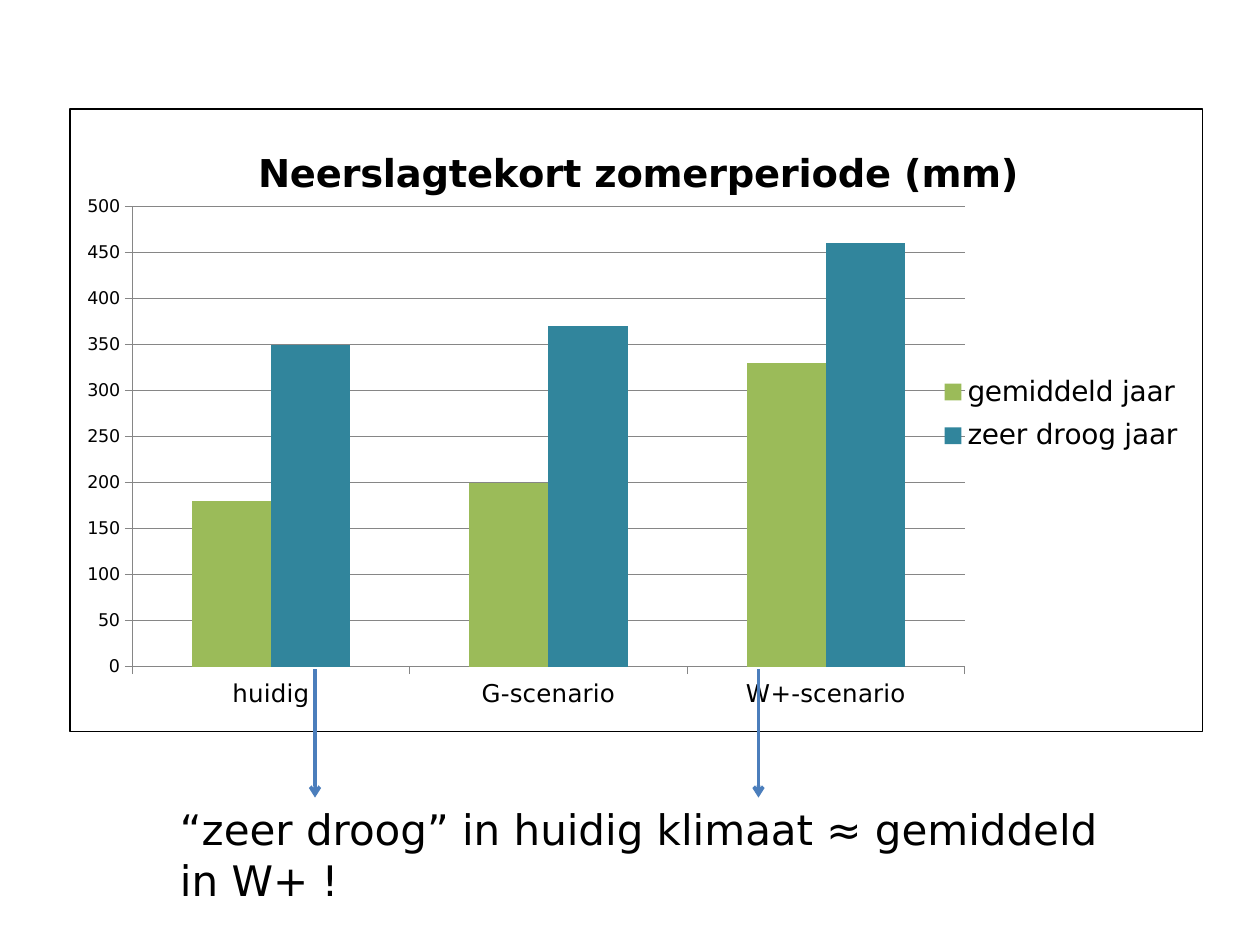
from pptx import Presentation
from pptx.chart.data import CategoryChartData
from pptx.dml.color import RGBColor
from pptx.enum.chart import XL_CHART_TYPE, XL_LEGEND_POSITION, XL_TICK_MARK
from pptx.enum.shapes import MSO_CONNECTOR
from pptx.enum.text import MSO_AUTO_SIZE
from pptx.oxml import parse_xml
from pptx.oxml.ns import nsdecls, qn
from pptx.util import Inches, Pt

COLUMNS = XL_CHART_TYPE.COLUMN_CLUSTERED
LEGEND_RIGHT = XL_LEGEND_POSITION.RIGHT
TICK_OUTSIDE = XL_TICK_MARK.OUTSIDE
STRAIGHT = MSO_CONNECTOR.STRAIGHT
GROW = MSO_AUTO_SIZE.SHAPE_TO_FIT_TEXT

COLORS = {
    "text": "000000",
    "axis": "868686",
    "arrow": "4B7EBC",
    "average": "9BBB59",
    "dry": "31859C",
}
FONT = "DejaVu Sans"


def rgb(name):
    return RGBColor.from_string(COLORS[name])


def set_layout(parent, index, x, y, w=None, h=None, inner=False):
    """Place a chart part by fractions of the chart area."""
    for old in parent.findall(qn("c:layout")):
        parent.remove(old)
    settings = [("layoutTarget", "inner")] if inner else []
    settings += [("xMode", "edge"), ("yMode", "edge"), ("x", x), ("y", y)]
    if w is not None:
        settings += [("w", w), ("h", h)]
    body = "".join(f'<c:{tag} val="{value}"/>' for tag, value in settings)
    parent.insert(index, parse_xml(
        f'<c:layout {nsdecls("c")}><c:manualLayout>{body}</c:manualLayout></c:layout>'))


class SlideBuilder:
    def __init__(self, slide):
        self.slide = slide

    def style_font(self, font, size, bold=False):
        font.color.rgb = rgb("text")
        values = {"name": FONT, "size": Pt(size), "bold": bold}
        for attribute, value in values.items():
            setattr(font, attribute, value)

    def style_line(self, line, color, width):
        line.color.rgb = rgb(color)
        line.width = Pt(width)

    def column_chart(self, box, title, categories, series):
        data = CategoryChartData(number_format="0")
        data.categories = categories
        for name, values, _ in series:
            data.add_series(name, values)
        chart = self.slide.shapes.add_chart(
            COLUMNS, *(Inches(v) for v in box), data).chart
        self.style_font(chart.font, 10)

        # Title and legend
        chart.has_title = True
        heading = chart.chart_title.text_frame
        heading.text = title
        self.style_font(heading.paragraphs[0].runs[0].font, 22, bold=True)
        chart.has_legend = True
        chart.legend.position = LEGEND_RIGHT
        chart.legend.include_in_layout = False
        self.style_font(chart.legend.font, 16)

        # Columns
        plot = chart.plots[0]
        plot.gap_width = 150
        plot.overlap = 0
        plot.vary_by_categories = False
        for column, (_, _, color) in zip(plot.series, series):
            column.format.fill.solid()
            column.format.fill.fore_color.rgb = rgb(color)

        # Axes
        for axis, size in ((chart.category_axis, 14), (chart.value_axis, 10)):
            axis.major_tick_mark = TICK_OUTSIDE
            self.style_line(axis.format.line, "axis", 0.75)
            self.style_font(axis.tick_labels.font, size)
        scale = {"minimum_scale": 0, "maximum_scale": 500, "major_unit": 50,
                 "has_major_gridlines": True}
        for attribute, value in scale.items():
            setattr(chart.value_axis, attribute, value)
        self.style_line(chart.value_axis.major_gridlines.format.line, "axis", 0.75)

        # Positions and border
        root = chart.element if hasattr(chart, "element") else chart._chartSpace
        area = root.find(qn("c:chart"))
        set_layout(area.find(qn("c:title")), 1, 0.16, 0.05)
        set_layout(area.find(qn("c:plotArea")), 0, 0.055, 0.157, 0.735, 0.739, True)
        set_layout(area.find(qn("c:legend")), 1, 0.77, 0.41, 0.21, 0.16)
        area.addnext(parse_xml(
            f'<c:spPr {nsdecls("c", "a")}><a:noFill/><a:ln w="{Pt(0.75)}"><a:solidFill>'
            f'<a:srgbClr val="{COLORS["text"]}"/></a:solidFill></a:ln></c:spPr>'))

    def text(self, box, words, size):
        frame = self.slide.shapes.add_textbox(*(Inches(v) for v in box)).text_frame
        for attribute, value in {"word_wrap": True, "auto_size": GROW}.items():
            setattr(frame, attribute, value)
        run = frame.paragraphs[0].add_run()
        run.text = words
        self.style_font(run.font, size)

    def down_arrow(self, x, top, bottom):
        arrow = self.slide.shapes.add_connector(
            STRAIGHT, Inches(x), Inches(top), Inches(x), Inches(bottom))
        self.style_line(arrow.line, "arrow", 2)
        arrow.line._get_or_add_ln().append(
            parse_xml(f'<a:tailEnd {nsdecls("a")} type="arrow"/>'))
        arrow._element.spPr.append(parse_xml(f'<a:effectLst {nsdecls("a")}/>'))


def main():
    deck = Presentation()
    deck.slide_width, deck.slide_height = Inches(10), Inches(7.5)
    builder = SlideBuilder(deck.slides.add_slide(deck.slide_layouts[6]))

    # Rainfall deficit per climate scenario
    builder.column_chart(
        (0.55, 0.86, 9, 4.95),
        "Neerslagtekort zomerperiode (mm)",
        ["huidig", "G-scenario", "W+-scenario"],
        [("gemiddeld jaar", (180, 200, 330), "average"),
         ("zeer droog jaar", (350, 370, 460), "dry")])

    # Conclusion, linked to the two columns it compares
    builder.text((1.33, 6.33, 7.81, 0.5),
                 "“zeer droog” in huidig klimaat ≈ gemiddeld in W+ !", 24)
    for x in (6.02, 2.5):
        builder.down_arrow(x, 5.31, 6.33)

    deck.save("out.pptx")


if __name__ == "__main__":
    main()
